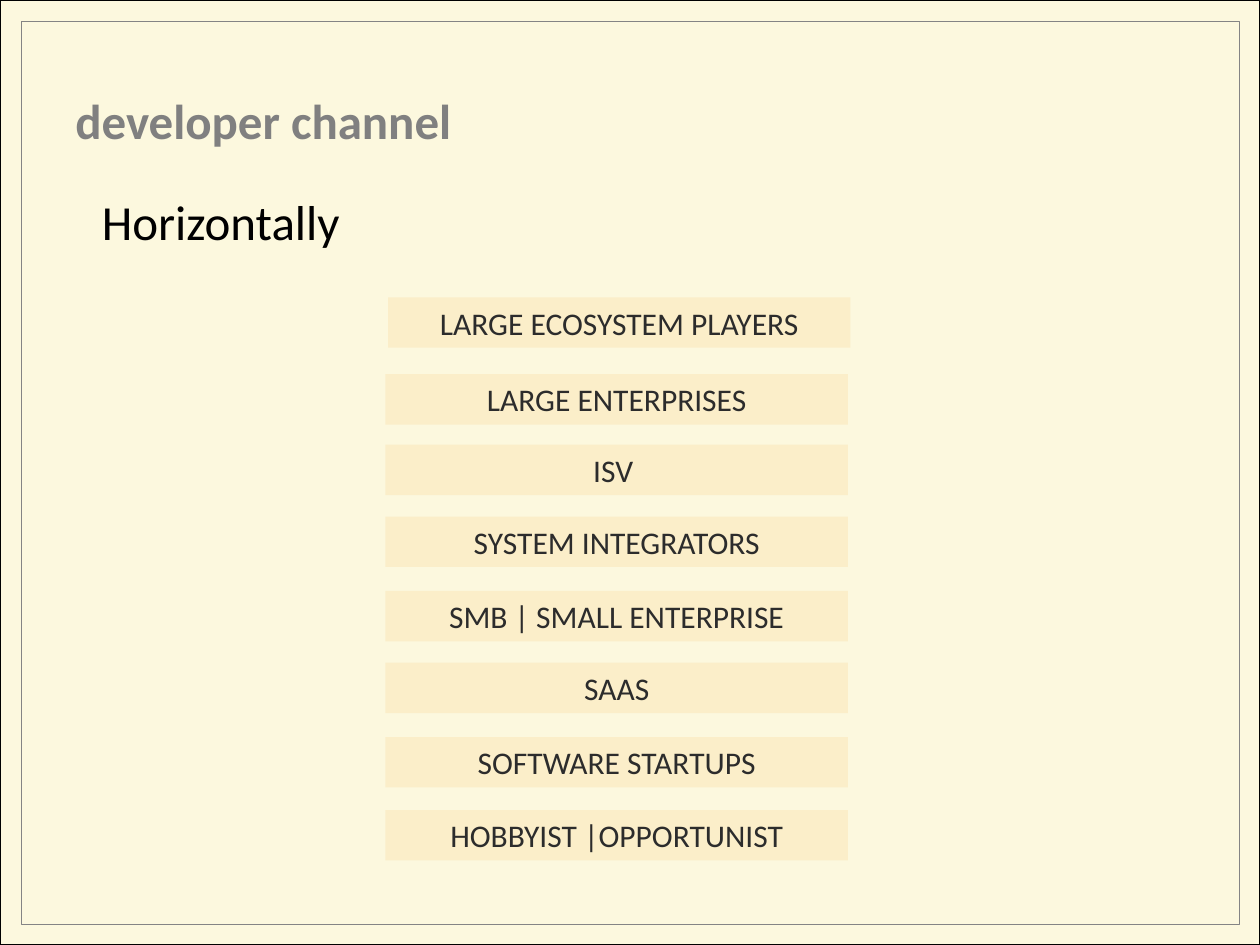
from pptx import Presentation
from pptx.dml.color import RGBColor
from pptx.enum.shapes import MSO_SHAPE as Shape
from pptx.enum.text import MSO_ANCHOR as Anchor, PP_ALIGN as Align
from pptx.util import Inches, Pt

CREAM = RGBColor(0xFC, 0xF8, 0xDE)
SAND = RGBColor(0xFB, 0xEE, 0xC9)
BLACK = RGBColor(0, 0, 0)
GREY = RGBColor(0x80, 0x80, 0x80)
EDGE = RGBColor(0x84, 0x84, 0x84)
INK = RGBColor(0x2C, 0x2C, 0x2C)

# Each tier: label, left, top
TIERS = [
    ("LARGE ECOSYSTEM PLAYERS", 3.08, 2.36),
    ("LARGE ENTERPRISES", 3.06, 2.97),
    ("ISV ", 3.06, 3.53),
    ("SYSTEM INTEGRATORS", 3.06, 4.1),
    ("SMB | SMALL ENTERPRISE", 3.06, 4.69),
    ("SAAS", 3.06, 5.26),
    ("SOFTWARE STARTUPS", 3.06, 5.85),
    ("HOBBYIST |OPPORTUNIST", 3.06, 6.43),
]


class Deck:
    font = "Calibri"

    def __init__(self, wide, high):
        self.prs = Presentation()
        self.prs.slide_width = Inches(wide)
        self.prs.slide_height = Inches(high)
        self.slide = self.prs.slides.add_slide(self.prs.slide_layouts[6])

    def add_text(self, shape, text, size, color, bold=False, align=Align.LEFT):
        frame = shape.text_frame
        frame.word_wrap = True
        frame.vertical_anchor = Anchor.MIDDLE
        para = frame.paragraphs[0]
        para.alignment = align
        run = para.add_run()
        run.text = text
        font = run.font
        font.name, font.size, font.bold = self.font, Pt(size), bold
        font.color.rgb = color

    def rect(self, box, fill=None, line=None, width=0.75):
        shape = self.slide.shapes.add_shape(Shape.RECTANGLE, *map(Inches, box))
        shape.shadow.inherit = False
        if fill is None:
            shape.fill.background()
        else:
            shape.fill.solid()
            shape.fill.fore_color.rgb = fill
        if line is None:
            shape.line.fill.background()
        else:
            shape.line.color.rgb = line
            shape.line.width = Pt(width)
        return shape

    def bar(self, text, left, top):
        shape = self.rect((left, top, 3.67, 0.4), SAND)
        self.add_text(shape, text, 18, INK, align=Align.CENTER)

    def label(self, box, text, color, bold=False):
        shape = self.slide.shapes.add_textbox(*map(Inches, box))
        self.add_text(shape, text, 28, color, bold)


def main():
    deck = Deck(10, 7.5)

    # Page and inner frame
    deck.rect((0, 0, 10, 7.5), CREAM, BLACK)
    deck.rect((0.17, 0.17, 9.67, 7.17), line=EDGE, width=0.5)

    # Channel tiers
    for tier in TIERS:
        deck.bar(*tier)

    # Headings
    deck.label((0.71, 1.42, 3.79, 0.67), "Horizontally", BLACK)
    deck.label((0.5, 0.67, 9, 0.57), "developer channel", GREY, bold=True)

    deck.prs.save("out.pptx")


if __name__ == "__main__":
    main()
